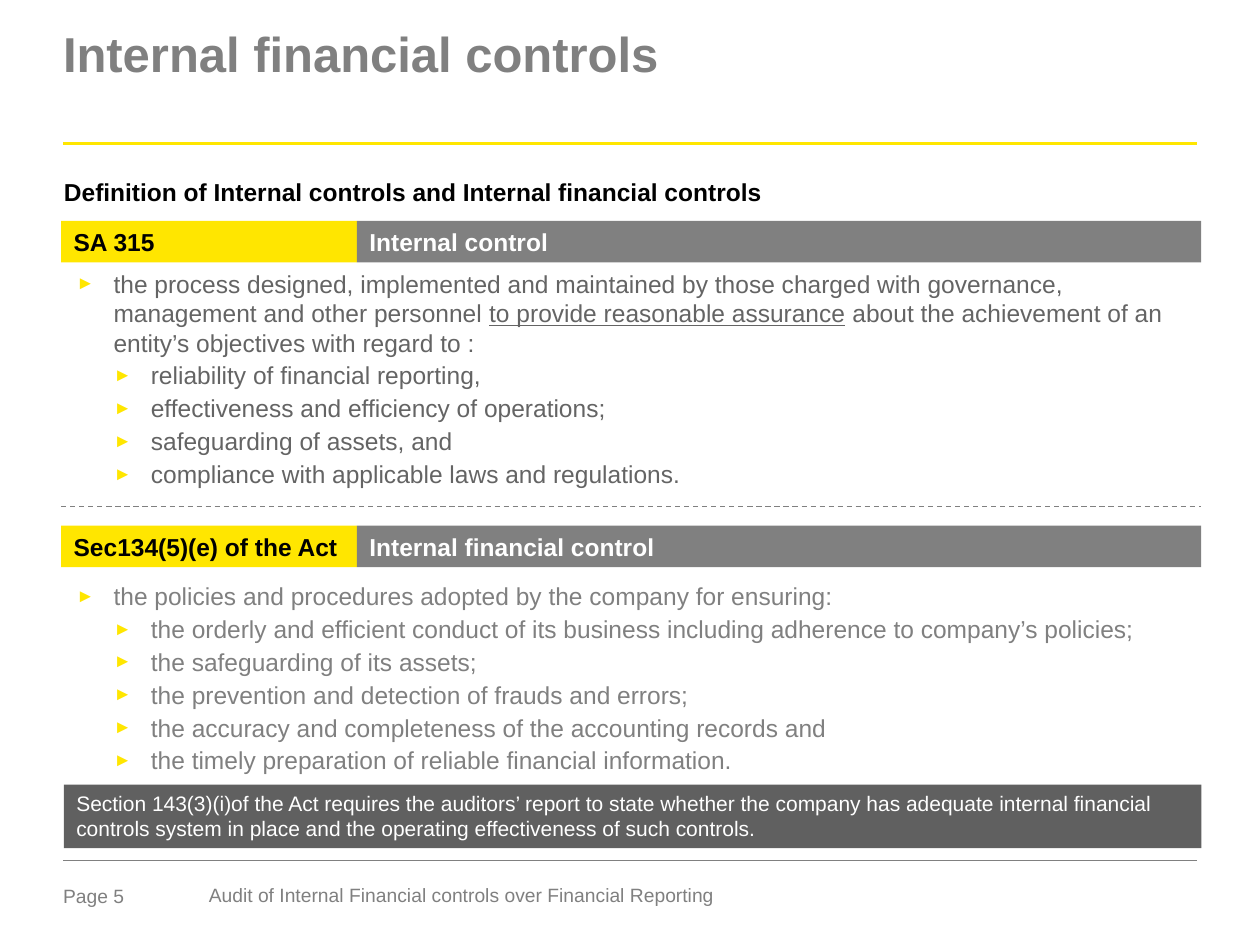
from lxml import etree
from pptx import Presentation
from pptx.dml.color import RGBColor
from pptx.enum.dml import MSO_LINE
from pptx.enum.shapes import MSO_CONNECTOR, MSO_SHAPE
from pptx.enum.text import MSO_ANCHOR, PP_ALIGN
from pptx.oxml.ns import qn
from pptx.util import Pt

YELLOW, GREY, DARK_GREY = "FFE600", "808080", "646464"
NOTE_GREY, BLACK, WHITE = "606060", "000000", "FFFFFF"
PADDED = (7.2, 3.6, 7.2, 3.6)


def rgb(hex_string):
    return RGBColor.from_string(hex_string)


class SlideBuilder:
    font = "Arial"
    body_size = 14

    def __init__(self, slide):
        self.slide = slide

    def frame(self, shape, insets, anchor=MSO_ANCHOR.TOP):
        frame = shape.text_frame
        frame.word_wrap = True
        frame.vertical_anchor = anchor
        (frame.margin_left, frame.margin_top,
         frame.margin_right, frame.margin_bottom) = map(Pt, insets)
        return frame

    def run(self, paragraph, text, size, color, bold=False, underline=None):
        run = paragraph.add_run()
        run.text = text
        font = run.font
        font.name, font.size, font.bold = self.font, Pt(size), bold
        font.underline = underline
        font.color.rgb = rgb(color)

    def title(self, text, left, top, width, height):
        title = self.slide.shapes.title
        title.left, title.top, title.width, title.height = map(Pt, (left, top, width, height))
        paragraph = self.frame(title, (0, 0, 0, 0)).paragraphs[0]
        paragraph.alignment = PP_ALIGN.LEFT
        paragraph.line_spacing = 0.85
        self.run(paragraph, text, 28, GREY, bold=True)

    def label(self, text, left, top, width, height, size, color,
              bold=False, inset_top=2.88, spacing=0.85):
        box = self.slide.shapes.add_textbox(*map(Pt, (left, top, width, height)))
        paragraph = self.frame(box, (0, inset_top, 0, 0)).paragraphs[0]
        paragraph.line_spacing = spacing
        self.run(paragraph, text, size, color, bold)

    def bar(self, text, left, top, width, height, fill, color,
            size=body_size, bold=True, anchor=MSO_ANCHOR.MIDDLE):
        bar = self.slide.shapes.add_shape(
            MSO_SHAPE.RECTANGLE, *map(Pt, (left, top, width, height)))
        bar.shadow.inherit = False
        bar.fill.solid()
        bar.fill.fore_color.rgb = rgb(fill)
        bar.line.fill.background()
        paragraph = self.frame(bar, PADDED, anchor).paragraphs[0]
        paragraph.alignment = PP_ALIGN.LEFT
        self.run(paragraph, text, size, color, bold)

    def rule(self, left, right, y, color, weight, dash=None):
        rule = self.slide.shapes.add_connector(
            MSO_CONNECTOR.STRAIGHT, Pt(left), Pt(y), Pt(right), Pt(y))
        rule.line.color.rgb = rgb(color)
        rule.line.width = Pt(weight)
        if dash:
            rule.line.dash_style = dash
        etree.SubElement(rule._element.spPr, qn("a:effectLst"))

    def bullet(self, paragraph, indent):
        properties = paragraph._p.get_or_add_pPr()
        properties.set("marL", str(Pt(indent)))
        properties.set("indent", str(Pt(-21.3)))
        color = etree.SubElement(properties, qn("a:buClr"))
        etree.SubElement(color, qn("a:srgbClr"), val=YELLOW)
        etree.SubElement(properties, qn("a:buSzPct"), val="75000")
        etree.SubElement(properties, qn("a:buFont"), typeface=self.font)
        etree.SubElement(properties, qn("a:buChar"), char="►")

    def bullets(self, lead, points, left, top, width, height, color):
        """Write a lead bullet of (text, underline) runs with sub-bullets below."""
        box = self.slide.shapes.add_textbox(*map(Pt, (left, top, width, height)))
        frame = self.frame(box, PADDED)
        items = [(21.3, lead)] + [(42.6, [(point, None)]) for point in points]
        for index, (indent, runs) in enumerate(items):
            paragraph = frame.add_paragraph() if index else frame.paragraphs[0]
            paragraph.space_before = paragraph.space_after = Pt(1)
            self.bullet(paragraph, indent)
            for text, underline in runs:
                self.run(paragraph, text, self.body_size, color, underline=underline)

    def section(self, source, term, top):
        self.bar(source, 35, top, 169, 23.8, YELLOW, BLACK)
        self.bar(term, 204, top, 482.4, 23.8, GREY, WHITE)


def main():
    presentation = Presentation()
    presentation.slide_width, presentation.slide_height = Pt(720), Pt(540)
    page = SlideBuilder(presentation.slides.add_slide(presentation.slide_layouts[5]))

    page.label("Page 5", 36, 505.4, 57, 15.8, 11, GREY, inset_top=0, spacing=1)
    page.label("Audit of Internal Financial controls over Financial Reporting",
               119.3, 504, 311, 14.4, 11, GREY)
    page.rule(36, 684, 82.1, YELLOW, 1.5)
    page.rule(36, 684, 491.6, GREY, 0.25)

    page.title("Internal financial controls", 36, 18.7, 648, 67.7)
    page.label("Definition of Internal controls and Internal financial controls",
               36.5, 101, 650, 17.3, 14, BLACK, bold=True)

    page.section("SA 315", "Internal control", 126.2)
    page.bullets(
        [("the process designed, implemented and maintained by those charged with "
          "governance, management and other personnel ", None),
         ("to provide reasonable assurance", True),
         (" about the achievement of an entity’s objectives with regard to :", None)],
        ["reliability of financial reporting,",
         "effectiveness and efficiency of operations;",
         "safeguarding of assets, and",
         "compliance with applicable laws and regulations."],
        36.5, 150, 650, 134, DARK_GREY)
    page.rule(35, 686.4, 289.4, GREY, 0.75, MSO_LINE.DASH)

    page.section("Sec134(5)(e) of the Act", "Internal financial control", 300.4)
    page.bullets(
        [("the policies and procedures adopted by the company for ensuring:", None)],
        ["the orderly and efficient conduct of its business including adherence to "
         "company’s policies;",
         "the safeguarding of its assets;",
         "the prevention and detection of frauds and errors;",
         "the accuracy and completeness of the accounting records and",
         "the timely preparation of reliable financial information."],
        36.5, 328.5, 650, 119, GREY)
    page.bar("Section 143(3)(i)of the Act requires the auditors’ report to state whether "
             "the company has adequate internal financial controls system in place and "
             "the operating effectiveness of such controls.",
             36.5, 448.3, 650, 36.3, NOTE_GREY, WHITE,
             size=12, bold=False, anchor=MSO_ANCHOR.TOP)

    presentation.save("out.pptx")


if __name__ == "__main__":
    main()
